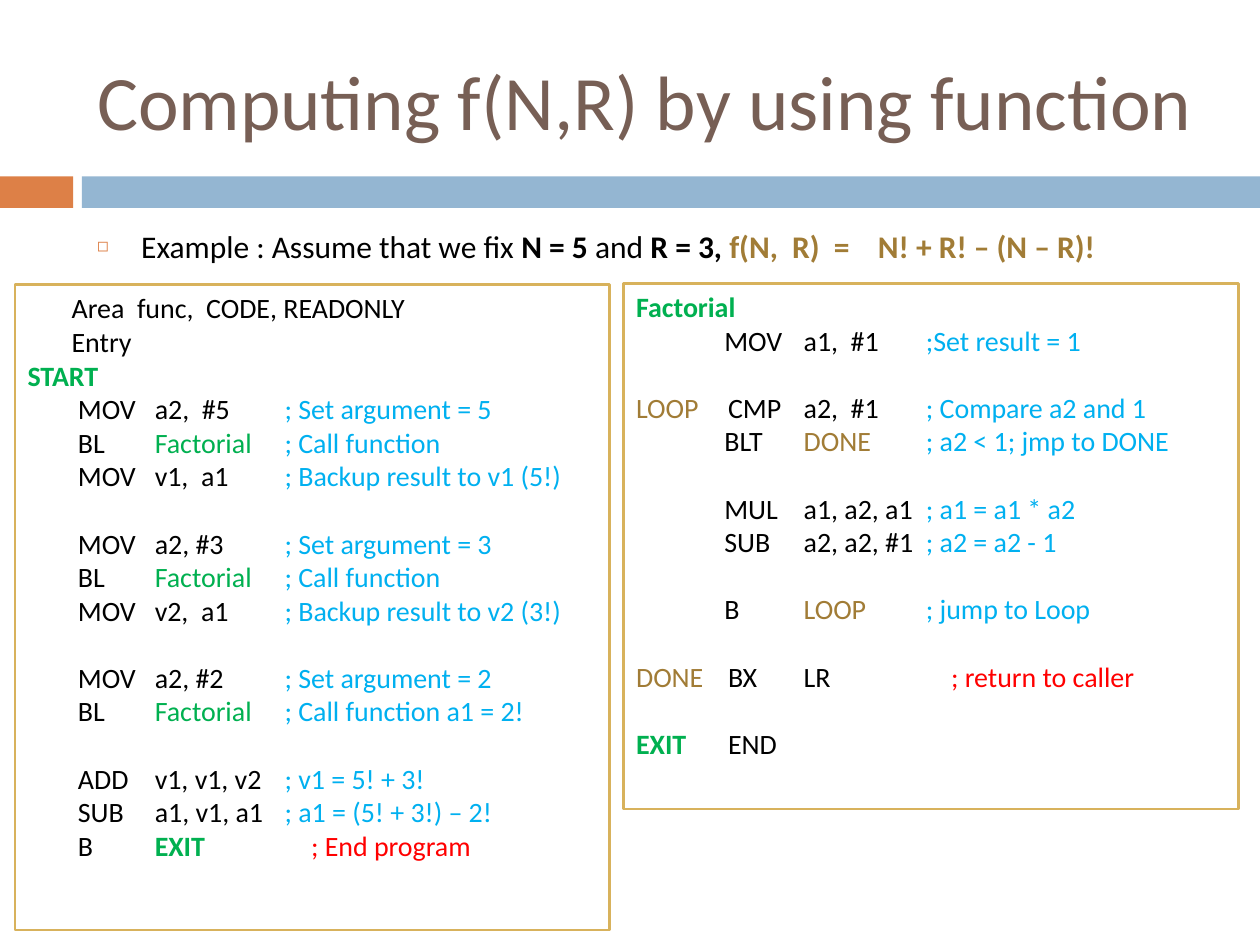
from lxml import etree
from pptx import Presentation
from pptx.dml.color import RGBColor
from pptx.enum.shapes import MSO_SHAPE
from pptx.enum.text import MSO_ANCHOR, MSO_AUTO_SIZE, PP_ALIGN
from pptx.oxml.ns import qn
from pptx.util import Inches, Pt

RECT = MSO_SHAPE.RECTANGLE
TOP, MIDDLE = MSO_ANCHOR.TOP, MSO_ANCHOR.MIDDLE
LEFT = PP_ALIGN.LEFT
NO_FIT = MSO_AUTO_SIZE.NONE

BLACK, WHITE, BROWN = "000000", "FFFFFF", "775F55"
ORANGE, BLUE, GOLD = "DD8047", "94B6D2", "D8B25C"
GREEN, OCHRE, CYAN, RED = "00B050", "A17C36", "00B0F0", "FF0000"


def rgb(color):
    return RGBColor.from_string(color)


def add_run(p, text, size=16, color=BLACK, bold=False):
    r = p.add_run()
    r.text = text
    r.font.name = "Calibri"
    r.font.size = Pt(size)
    r.font.bold = bold
    r.font.color.rgb = rgb(color)


prs = Presentation()
prs.slide_width, prs.slide_height = Inches(10), Inches(7.5)
# Grid of 100 columns by 100 rows
COL, ROW = prs.slide_width / 100, prs.slide_height / 100
s = prs.slides.add_slide(prs.slide_layouts[1])

# Bars under the title
for x, w, color in [(0, 5.8, ORANGE), (6.5, 93.5, BLUE)]:
    sp = s.shapes.add_shape(RECT, int(x * COL), int(18.67 * ROW),
                            int(w * COL), int(3.33 * ROW))
    sp.shadow.inherit = False
    sp.fill.solid()
    sp.fill.fore_color.rgb = rgb(color)
    sp.line.fill.background()

# Title and body placeholders
title, body = s.shapes.title, s.placeholders[1]
for sp, y, w, h, anchor in [(title, 3.33, 89.2, 14.4, MIDDLE),
                            (body, 23.33, 89, 9.87, TOP)]:
    sp.left, sp.top = int(6.7 * COL), int(y * ROW)
    sp.width, sp.height = int(w * COL), int(h * ROW)
    tf = sp.text_frame
    tf.auto_size = NO_FIT
    tf.vertical_anchor = anchor
    tf.paragraphs[0].alignment = LEFT
    tf.paragraphs[0].space_before = Pt(0)

add_run(title.text_frame.paragraphs[0], "Computing f(N,R) by using function",
        size=44, color=BROWN)

# Example line with a square bullet
p = body.text_frame.paragraphs[0]
pPr = p._p.get_or_add_pPr()
indent = int(3.5 * COL)
pPr.set("marL", str(indent))
pPr.set("indent", str(-indent))
bullet_color = etree.SubElement(pPr, qn("a:buClr"))
etree.SubElement(bullet_color, qn("a:srgbClr"), val=ORANGE)
etree.SubElement(pPr, qn("a:buSzPct"), val="60000")
etree.SubElement(pPr, qn("a:buChar"), char="◻")
for text, color, bold in [
    ("Example : Assume that we fix ", BLACK, False),
    ("N = 5 ", BLACK, True),
    ("and ", BLACK, False),
    ("R = 3, ", BLACK, True),
    ("f(N,  R)  =    N! + R! – (N – R)!", OCHRE, True),
]:
    add_run(p, text, size=18, color=color, bold=bold)

# Code: a tab starts the next column, an empty entry opens a one-line gap
main_code = [
    "       Area  func,  CODE, READONLY",
    "       Entry",
    "START",
    "        MOV\ta2,  #5\t; Set argument = 5",
    "        BL\tFactorial\t; Call function",
    "        MOV\tv1,  a1\t; Backup result to v1 (5!)",
    "",
    "        MOV\ta2, #3\t; Set argument = 3",
    "        BL\tFactorial\t; Call function",
    "        MOV\tv2,  a1\t; Backup result to v2 (3!)",
    "",
    "        MOV\ta2, #2\t; Set argument = 2",
    "        BL\tFactorial\t; Call function a1 = 2!",
    "",
    "        ADD\tv1, v1, v2\t; v1 = 5! + 3!",
    "        SUB\ta1, v1, a1\t; a1 = (5! + 3!) – 2!",
    "        B\tEXIT\t\t; End program",
]
function_code = [
    "Factorial",
    "              MOV\ta1,  #1\t;Set result = 1",
    "",
    "LOOP\tCMP\ta2,  #1\t; Compare a2 and 1",
    "              BLT\tDONE\t; a2 < 1; jmp to DONE",
    "",
    "              MUL\ta1, a2, a1\t; a1 = a1 * a2",
    "              SUB\ta2, a2, #1\t; a2 = a2 - 1",
    "",
    "              B\tLOOP\t; jump to Loop",
    "",
    "DONE\tBX\tLR\t\t; return to caller",
    "",
    "EXIT\tEND",
]
label_colors = {"START": GREEN, "Factorial": GREEN, "EXIT": GREEN,
                "LOOP": OCHRE, "DONE": OCHRE}
exit_comments = ("; End program", "; return to caller")

# Code boxes: place, tab stops in columns, lines
for x, y, w, h, stops, code in [
    (1.2, 30.13, 47.2, 68.27, (10.1, 20.4, 22.5), main_code),
    (49.5, 30, 48.8, 55.6, (7.3, 13.3, 23, 25), function_code),
]:
    sp = s.shapes.add_shape(RECT, int(x * COL), int(y * ROW),
                            int(w * COL), int(h * ROW))
    sp.shadow.inherit = False
    sp.fill.solid()
    sp.fill.fore_color.rgb = rgb(WHITE)
    sp.line.color.rgb = rgb(GOLD)
    sp.line.width = Pt(1.5)
    tf = sp.text_frame
    tf.word_wrap = True
    tf.vertical_anchor = TOP
    p, gap = tf.paragraphs[0], 0
    for n, line in enumerate(code):
        if not line:
            gap = 19.2
            continue
        if n:
            p = tf.add_paragraph()
        p.alignment = LEFT
        p.space_before = Pt(gap)
        gap = 0
        tabs = etree.SubElement(p._p.get_or_add_pPr(), qn("a:tabLst"))
        for stop in stops:
            etree.SubElement(tabs, qn("a:tab"), pos=str(int(stop * COL)), algn="l")
        for i, field in enumerate(line.split("\t")):
            color = label_colors.get(field, BLACK)
            if field.startswith(";"):
                color = RED if field in exit_comments else CYAN
            bold = color == GREEN and (i == 0 or field == "EXIT")
            add_run(p, "\t" + field if i else field, color=color, bold=bold)

prs.save("out.pptx")
